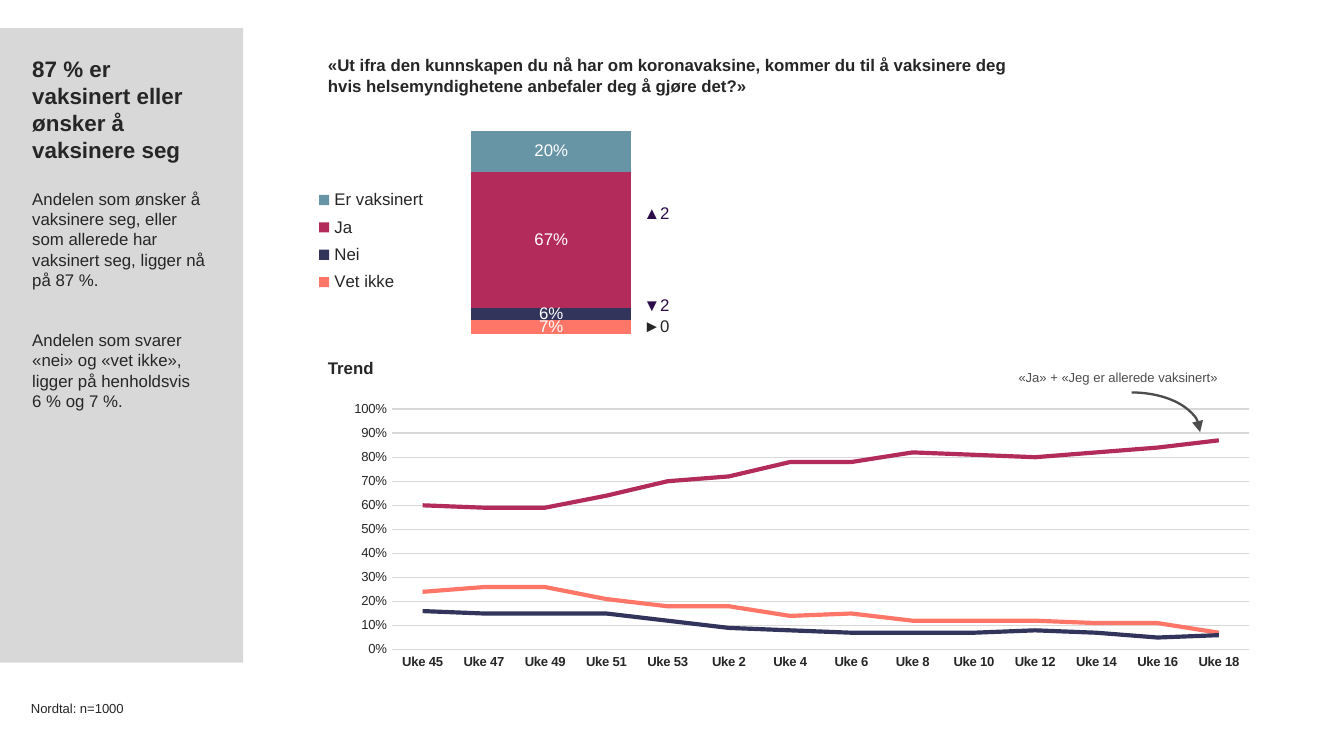
import pptx
import pptx.chart.data
import pptx.dml.color
import pptx.enum.chart
import pptx.enum.shapes
import pptx.enum.text
import pptx.oxml
import pptx.oxml.ns
import pptx.util
from lxml import etree

Inches, Pt = pptx.util.Inches, pptx.util.Pt
qn = pptx.oxml.ns.qn

FONT = "Arial"
NBSP = chr(160)  # keeps a number and its percent sign on one line
COLORS = {
    "panel": "BEBFC0", "text": "262626", "purple": "2D0C4B", "grey": "4D4D4D",
    "grid": "D9D9D9", "white": "FFFFFF", "coral": "FE7668", "navy": "32345C",
    "berry": "B22B5A", "teal": "6795A6",
}

# Content: (text, size, bold, space before)
SUMMARY = [
    (f"87{NBSP}% er vaksinert eller ønsker å vaksinere seg", 12, True, 0),
    ("Andelen som ønsker å vaksinere seg, eller som allerede har vaksinert seg, "
     "ligger nå på 87 %.", 9, False, 14),
    (f"Andelen som svarer «nei» og «vet ikke», ligger på henholdsvis 6{NBSP}% og 7 %.",
     9, False, 21.5),
]
QUESTION = ("«Ut ifra den kunnskapen du nå har om koronavaksine, kommer du til å "
            "vaksinere deg hvis helsemyndighetene anbefaler deg å gjøre det?»")
SOURCE = "Nordtal: n=1000"
CHANGES = [("►0", 2.3, "text"), ("▼2", 2.14, "purple"), ("▲2", 1.46, "purple")]
ANSWERS = [("Vet ikke", 0.07, "coral"), ("Nei", 0.06, "navy"),
           ("Ja", 0.67, "berry"), ("Er vaksinert", 0.2, "teal")]
WEEKS = [f"Uke {week}" for week in (*range(45, 54, 2), *range(2, 19, 2))]
TREND = [
    ("Series 1", "coral", [24, 26, 26, 21, 18, 18, 14, 15, 12, 12, 12, 11, 11, 7]),
    ("Series 2", "navy", [16, 15, 15, 15, 12, 9, 8, 7, 7, 7, 8, 7, 5, 6]),
    ("Series 3", "berry", [60, 59, 59, 64, 70, 72, 78, 78, 82, 81, 80, 82, 84, 87]),
]


def rgb(name):
    return pptx.dml.color.RGBColor.from_string(COLORS[name])


def style_font(font, size, color="text", bold=False):
    font.name, font.size, font.bold = FONT, Pt(size), bold
    font.color.rgb = rgb(color)


def add_text(page, at, paras):
    """Text box without insets that wraps at its width."""
    box = page.shapes.add_textbox(*map(Inches, at))
    frame = box.text_frame
    frame.word_wrap = True
    frame.margin_left = frame.margin_right = frame.margin_top = frame.margin_bottom = 0
    for i, (text, size, bold, before) in enumerate(paras):
        para = frame.add_paragraph() if i else frame.paragraphs[0]
        para.text = text
        if before:
            para.space_before = Pt(before)
        style_font(para.runs[0].font, size, "text", bold)


def add_label(page, at, text, size, color):
    """Single-line box with the usual insets."""
    box = page.shapes.add_textbox(*map(Inches, at))
    box.text_frame.word_wrap = False
    box.text_frame.auto_size = pptx.enum.text.MSO_AUTO_SIZE.SHAPE_TO_FIT_TEXT
    box.text_frame.text = text
    style_font(box.text_frame.paragraphs[0].runs[0].font, size, color)


def add_chart(page, kind, at, categories, series):
    data = pptx.chart.data.CategoryChartData(number_format="0%")
    data.categories = categories
    for name, values in series:
        data.add_series(name, values)
    chart = page.shapes.add_chart(kind, *map(Inches, at), data).chart
    chart.has_title = False
    chart.has_legend = False
    style_font(chart.font, 10, "purple")
    chart.plots[0].vary_by_categories = False
    return chart


def place(parent, index, area, inner=False):
    """Fix the place of a plot area or legend as fractions of its chart."""
    for old in parent.findall(qn("c:layout")):
        parent.remove(old)
    layout = etree.Element(qn("c:layout"))
    manual = etree.SubElement(layout, qn("c:manualLayout"))
    settings = [("layoutTarget", "inner")] if inner else []
    settings += [("xMode", "edge"), ("yMode", "edge"), *zip("xywh", area)]
    for tag, value in settings:
        etree.SubElement(manual, qn(f"c:{tag}")).set("val", str(value))
    parent.insert(index, layout)


def place_plot(chart, area):
    place(chart.element.find(".//" + qn("c:plotArea")), 0, area, inner=True)


deck = pptx.Presentation()
deck.slide_width = Inches(10)
deck.slide_height = Inches(10 * 9 / 16)
page = deck.slides.add_slide(deck.slide_layouts[6])
Shape = pptx.enum.shapes.MSO_SHAPE
ChartType = pptx.enum.chart.XL_CHART_TYPE

# Side panel with summary
panel = page.shapes.add_shape(Shape.RECTANGLE, *map(Inches, (0, 0.21, 1.81, 4.72)))
panel.shadow.inherit = False
panel.fill.solid()
panel.fill.fore_color.rgb = rgb("panel")
panel.line.fill.background()
fill_color = panel.element.spPr.find(".//" + qn("a:srgbClr"))
etree.SubElement(fill_color, qn("a:alpha")).set("val", "60000")
add_text(page, (0.24, 0.41, 1.34, 3.46), SUMMARY)

# Headings and source
add_text(page, (0.23, 5.21, 1.58, 0.24), [(SOURCE, 7, False, 0)])
add_text(page, (2.44, 0.41, 5.12, 0.51), [(QUESTION, 9, True, 0)])
add_text(page, (2.44, 2.66, 1.34, 0.51), [("Trend", 9, True, 0)])

# Stacked column of this week's answers
column = add_chart(page, ChartType.COLUMN_STACKED_100, (2.32, 0.83, 3.27, 1.82), ["1"],
                   [(name, [value]) for name, value, _ in ANSWERS])
column.plots[0].gap_width, column.plots[0].overlap = 150, 100
column.value_axis.has_major_gridlines = False
column.value_axis.visible = column.category_axis.visible = False
for series, (_, _, color) in zip(column.plots[0].series, ANSWERS):
    series.format.fill.solid()
    series.format.fill.fore_color.rgb = rgb(color)
    labels = series.data_labels
    labels.show_value = True
    labels.number_format, labels.number_format_is_linked = "0%", False
    style_font(labels.font, 9, "white")
column.has_legend = True
column.legend.position = pptx.enum.chart.XL_LEGEND_POSITION.LEFT
column.legend.include_in_layout = True
style_font(column.legend.font, 9)
place(column.element.find(".//" + qn("c:legend")), 1, (0, 0.29, 0.27, 0.48))
place_plot(column, (0.09, 0.08, 0.91, 0.83))

# Changes since last time
for text, top, color in CHANGES:
    add_label(page, (4.69, top, 0.4, 0.25), text, 9, color)

# Trend lines
trend = add_chart(page, ChartType.LINE, (2.42, 2.89, 7.09, 2.21), WEEKS,
                  [(name, [v / 100 for v in values]) for name, _, values in TREND])
for series, (_, color, _) in zip(trend.plots[0].series, TREND):
    series.smooth = False
    series.marker.style = pptx.enum.chart.XL_MARKER_STYLE.NONE
    series.format.line.color.rgb = rgb(color)
    series.format.line.width = Pt(2.25)
weeks, shares = trend.category_axis, trend.value_axis
for axis, bold in ((weeks, True), (shares, False)):
    axis.major_tick_mark = axis.minor_tick_mark = pptx.enum.chart.XL_TICK_MARK.NONE
    style_font(axis.tick_labels.font, 7, "text", bold)
shares.minimum_scale, shares.maximum_scale, shares.major_unit = 0, 1, 0.1
shares.tick_labels.number_format = "0%"
shares.tick_labels.number_format_is_linked = False
shares.format.line.fill.background()
for line in (weeks.format.line, shares.major_gridlines.format.line):
    line.color.rgb, line.width = rgb("grid"), Pt(0.75)
place_plot(trend, (0.07, 0.07, 0.9, 0.81))

# Note with curved arrow
arrow = page.shapes.add_shape(Shape.ARC, *map(Inches, (7.91, 2.92, 1.02, 0.59)))
arrow.shadow.inherit = False
arrow.fill.background()
arrow.line.color.rgb, arrow.line.width = rgb("grey"), Pt(1.25)
outline = arrow.element.spPr.find(qn("a:ln"))
etree.SubElement(outline, qn("a:tailEnd")).set("type", "triangle")
add_label(page, (7.48, 2.7, 1.71, 0.22), "«Ja» + «Jeg er allerede vaksinert»", 7, "grey")

deck.save("out.pptx")
